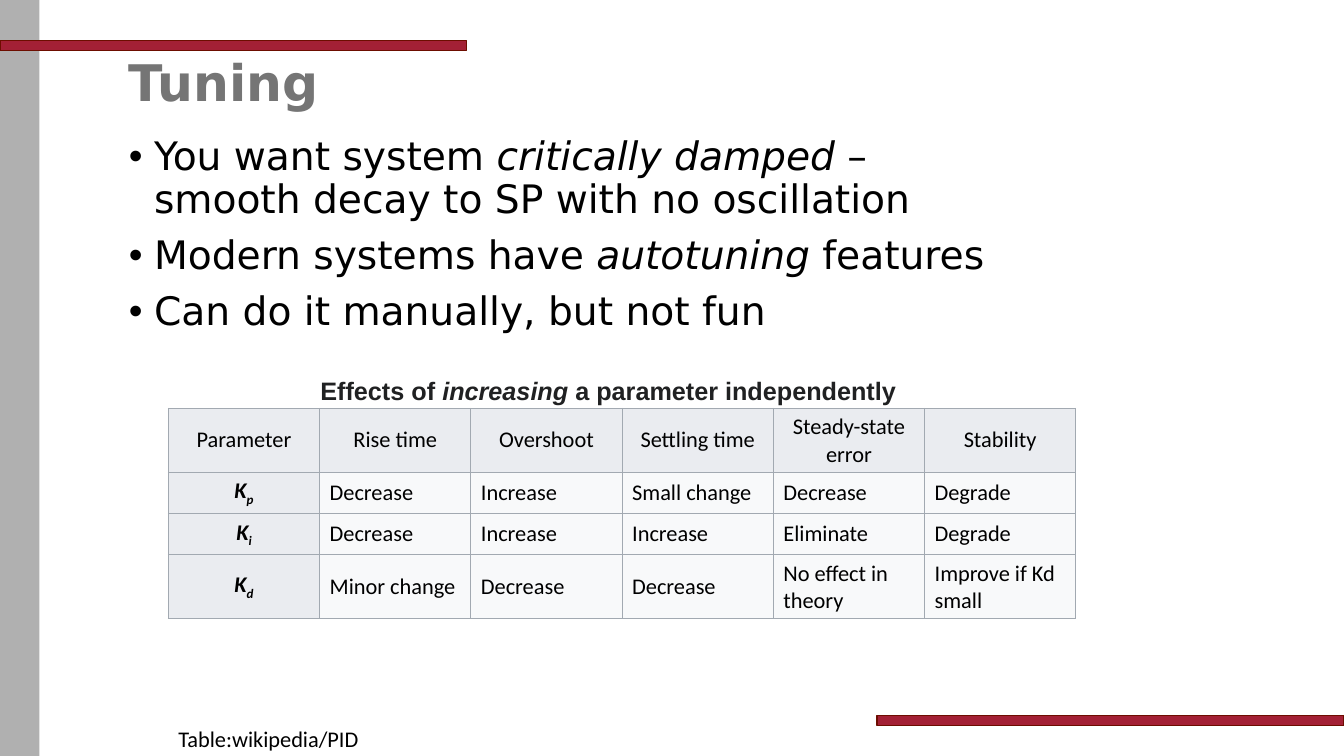
from lxml.etree import SubElement
from pptx import Presentation
from pptx.dml.color import RGBColor
from pptx.enum.shapes import MSO_SHAPE as Shape
from pptx.enum.text import MSO_ANCHOR as Anchor, PP_ALIGN as Align
from pptx.oxml.ns import qn
from pptx.util import Inches, Pt

EFFECTS = [
    ["Parameter", "Rise time", "Overshoot", "Settling time", "Steady-state error", "Stability"],
    ["p", "Decrease", "Increase", "Small change", "Decrease", "Degrade"],
    ["i", "Decrease", "Increase", "Increase", "Eliminate", "Degrade"],
    ["d", "Minor change", "Decrease", "Decrease", "No effect in theory", "Improve if Kd small"],
]
ROW_HEIGHTS = [0.63, 0.41, 0.41, 0.62]


def color(value):
    return RGBColor.from_string(value)


def write(paragraph, text, size=16, font="Calibri", ink="000000", bold=False,
          italic=False, subscript=False):
    """Add runs to the paragraph; parts between asterisks are italic."""
    for i, part in enumerate(text.split("*")):
        run = paragraph.add_run()
        run.text = part
        run.font.size, run.font.name = Pt(size), font
        run.font.bold, run.font.italic = bold, italic or i % 2 == 1
        run.font.color.rgb = color(ink)
        if subscript:
            run.font._element.set("baseline", "-25000")


def add_bullet(paragraph):
    props = paragraph._p.get_or_add_pPr()
    props.set("marL", str(Inches(0.25)))
    props.set("indent", str(Inches(-0.25)))
    SubElement(props, qn("a:buFont"), typeface="Arial")
    SubElement(props, qn("a:buChar"), char="•")


def add_borders(cell, ink, width):
    props = cell._tc.get_or_add_tcPr()
    for i, side in enumerate(("lnL", "lnR", "lnT", "lnB")):
        line = SubElement(props, qn(f"a:{side}"), w=str(Pt(width)))
        fill = SubElement(line, qn("a:solidFill"))
        SubElement(fill, qn("a:srgbClr"), val=ink)
        props.insert(i, line)


class TuningSlide:
    heading_font = "DejaVu Sans"
    gray, red, dark_red = "B0B0B0", "A32035", "6D0D00"
    header_fill, cell_fill, border = "EAECF0", "F8F9FA", "A2A9B1"

    def __init__(self, slide):
        self.shapes = slide.shapes

    def bar(self, left, top, width, height, fill, outline=None):
        bar = self.shapes.add_shape(Shape.RECTANGLE, *map(Inches, (left, top, width, height)))
        bar.shadow.inherit = False
        bar.fill.solid()
        bar.fill.fore_color.rgb = color(fill)
        if outline:
            bar.line.color.rgb = color(outline)
            bar.line.width = Pt(1)
        else:
            bar.line.fill.background()

    def text(self, left, top, width, height, lines, anchor=Anchor.TOP, wrap=True,
             bullets=False, spacing=None, **style):
        box = self.shapes.add_textbox(*map(Inches, (left, top, width, height)))
        frame = box.text_frame
        frame.word_wrap, frame.vertical_anchor = wrap, anchor
        for i, line in enumerate(lines):
            paragraph = frame.add_paragraph() if i else frame.paragraphs[0]
            if bullets:
                add_bullet(paragraph)
            if spacing:
                paragraph.line_spacing = spacing
            if i:
                paragraph.space_before = Pt(10)
            write(paragraph, line, **style)

    def table(self, left, top, column_width, row_heights, rows):
        columns = len(rows[0])
        table = self.shapes.add_table(
            len(rows), columns, Inches(left), Inches(top),
            Inches(column_width * columns), Inches(sum(row_heights))).table
        for column in table.columns:
            column.width = Inches(column_width)
        for r, values in enumerate(rows):
            table.rows[r].height = Inches(row_heights[r])
            for c, value in enumerate(values):
                self.cell(table.cell(r, c), value, r == 0, c == 0)

    def cell(self, cell, value, in_header, in_first_column):
        heading = in_header or in_first_column
        cell.vertical_anchor = Anchor.MIDDLE
        cell.fill.solid()
        cell.fill.fore_color.rgb = color(self.header_fill if heading else self.cell_fill)
        add_borders(cell, self.border, 0.75)
        paragraph = cell.text_frame.paragraphs[0]
        paragraph.alignment = Align.CENTER if heading else Align.LEFT
        if in_first_column and not in_header:
            write(paragraph, "K", bold=True, italic=True)
            write(paragraph, value, bold=True, italic=True, subscript=True)
        else:
            write(paragraph, value)


def main():
    deck = Presentation()
    deck.slide_width, deck.slide_height = Inches(13.33), Inches(7.5)
    page = TuningSlide(deck.slides.add_slide(deck.slide_layouts[6]))

    page.bar(0, 0, 0.39, 7.5, page.gray)
    for left, top in ((0, 0.4), (8.7, 7.1)):
        page.bar(left, top, 4.63, 0.1, page.red, page.dark_red)

    page.text(1.18, 0.22, 9, 1.25, ["Tuning"], anchor=Anchor.MIDDLE, spacing=0.9,
              size=36, font=page.heading_font, ink="757575", bold=True)
    page.text(1.18, 1.31, 9, 4.95, [
        "You want system *critically damped* – smooth decay to SP with no oscillation",
        "Modern systems have *autotuning* features",
        "Can do it manually, but not fun",
    ], bullets=True, spacing=0.9, size=28, font=page.heading_font)
    page.text(1.67, 7.14, 2.01, 0.37, ["Table:wikipedia/PID"], wrap=False)
    page.table(1.67, 4.05, 1.5, ROW_HEIGHTS, EFFECTS)
    page.text(3.08, 3.67, 7, 0.4, ["Effects of *increasing* a parameter independently"],
              size=18, font="Arial", ink="202122", bold=True)

    deck.save("out.pptx")


if __name__ == "__main__":
    main()
